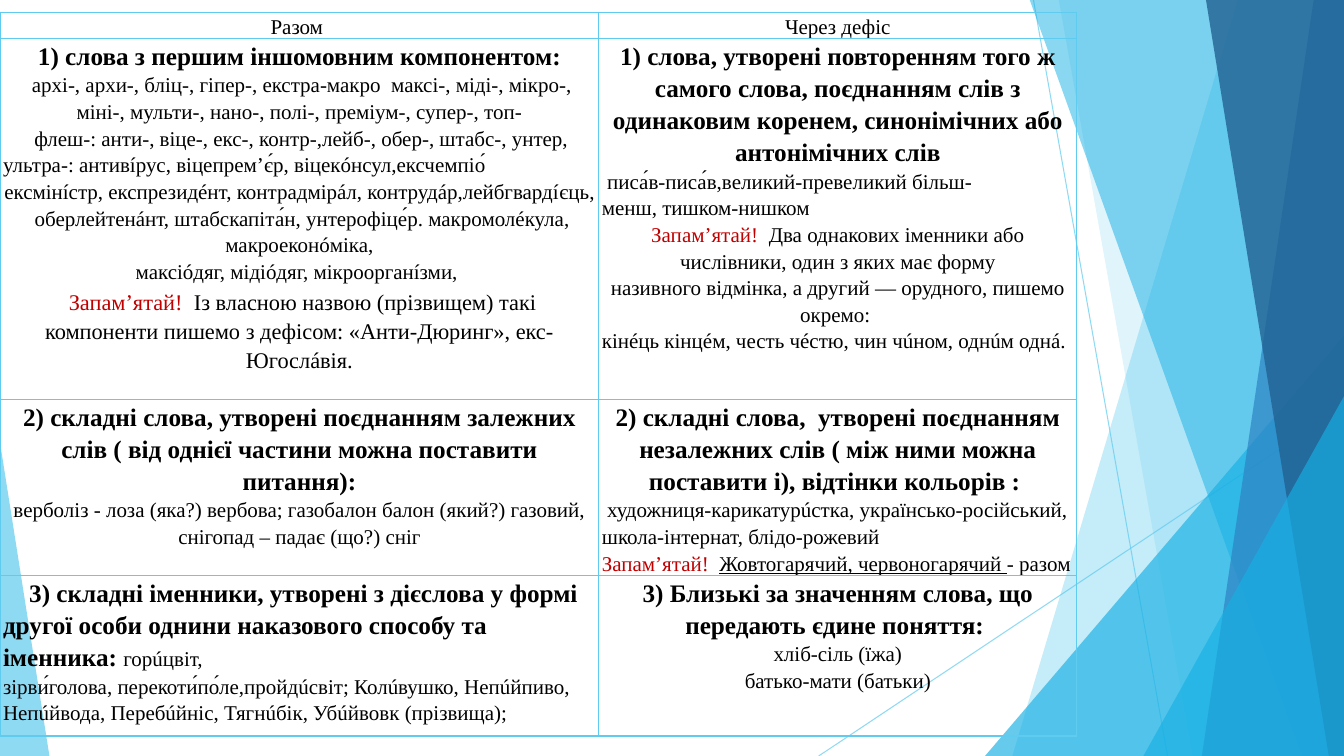
from dataclasses import dataclass

from lxml import etree
from pptx import Presentation
from pptx.dml.color import RGBColor
from pptx.enum import shapes, text
from pptx.oxml import ns
from pptx.util import Inches, Pt


@dataclass(frozen=True)
class Theme:
    font: str = "Times New Roman"
    ink: str = "000000"
    red: str = "C00000"
    sky: str = "5FCBEF"
    cyan: str = "17B0E4"
    blue: str = "2E83C3"
    navy: str = "226292"
    head: int = 18
    note: int = 16
    body: int = 15
    leading: float = 1.15


T = Theme()
W, H = 13.33, 7.5
C, L = text.PP_ALIGN.CENTER, text.PP_ALIGN.LEFT

# Run styles: size, bold, colour, underline
HEAD = (T.head, True, T.ink, False)
GAP = (T.head, False, T.ink, False)
BODY = (T.body, False, T.ink, False)
UNDER = (T.body, False, T.ink, True)
ALERT = (T.body, False, T.red, False)
NOTE = (T.note, False, T.ink, False)
NOTE_ALERT = (T.note, False, T.red, False)


def para(*runs, align=C, indent=0):
    return align, indent, runs


def head(words):
    return para((words, HEAD))


def body(words, align=C, indent=0):
    return para((words, BODY), align=align, indent=indent)


# Table content: one list of paragraphs per cell
ROWS = [
    [[body("Разом ")], [body("Через дефіс")]],
    [
        [
            head("1) слова з першим іншомовним компонентом:"),
            body(" архі-, архи-, бліц-, гіпер-, екстра-макро  максі-, міді-, мікро-, міні-, "
                 "мульти-, нано-, полі-, преміум-, супер-, топ-"),
            body("флеш-: анти-, віце-, екс-, контр-,лейб-, обер-, штабс-, унтер, ультра-: "
                 "антивíрус, віцепрем’є́р, віцекóнсул,ексчемпіо́", L, 0.31),
            body("ексмінíстр, експрезидéнт, контрадмірáл, контрудáр,лейбгвардíєць,  "
                 "оберлейтенáнт, штабскапіта́н, унтерофіце́р. макромолéкула, макроеконóміка,"),
            body("максіóдяг, мідіóдяг, мікроорганíзми, "),
            para((" ", GAP), ("Запам’ятай!  ", NOTE_ALERT),
                 ("Із власною назвою (прізвищем) такі компоненти пишемо з дефісом: "
                  "«Анти-Дюринг», екс-Югослáвія.", NOTE)),
        ],
        [
            head("1) слова, утворені повторенням того ж самого слова, поєднанням слів з "
                 "одинаковим коренем, синонімічних або антонімічних слів"),
            body(" писа́в-писа́в,великий-превеликий більш-", L),
            body("менш, тишком-нишком", L),
            para(("Запам’ятай!  ", ALERT),
                 ("Два однакових іменники або числівники, один з яких має форму", BODY)),
            body("називного відмінка, а другий — орудного, пишемо окремо: "),
            body("кінéць кінцéм, честь чéстю, чин чúном, однúм однá.", L),
        ],
    ],
    [
        [
            head("2) складні слова, утворені поєднанням залежних слів "
                 "( від однієї частини можна поставити питання):"),
            body("верболіз - лоза (яка?) вербова; газобалон балон (який?) газовий, "
                 "снігопад – падає (що?) сніг"),
        ],
        [
            head("2) складні слова,  утворені поєднанням незалежних слів "
                 "( між ними можна поставити і), відтінки кольорів : "),
            body(" художниця-карикатурúстка, українсько-російський, "
                 "школа-інтернат, блідо-рожевий", L),
            para(("Запам’ятай!  ", ALERT), ("Жовтогарячий, червоногарячий ", UNDER),
                 ("- разом", BODY), align=L),
        ],
    ],
    [
        [
            para(("3) складні іменники, утворені з дієслова у формі другої особи однини "
                  "наказового способу та іменника: ", HEAD), ("горúцвіт,", BODY),
                 align=L, indent=0.26),
            body("зірви́голова, перекоти́по́ле,пройдúсвіт; Колúвушко, Непúйпиво, "
                 "Непúйвода, Перебúйніс, Тягнúбік, Убúйвовк (прізвища);", L),
        ],
        [
            head("3) Близькі за значенням слова, що передають єдине поняття: "),
            body("хліб-сіль (їжа)"),
            body("батько-мати (батьки)"),
        ],
    ],
]


def set_alpha(fill_parent, percent):
    for clr in fill_parent.iter(ns.qn("a:srgbClr")):
        etree.SubElement(clr, ns.qn("a:alpha")).set("val", str(percent * 1000))


def paint(sp, color, percent):
    sp.shadow.inherit = False
    sp.fill.solid()
    sp.fill.fore_color.rgb = RGBColor.from_string(color)
    set_alpha(sp._element.spPr, percent)
    sp.line.fill.background()


def add_ray(s, x1, y1, x2, y2):
    ray = s.shapes.add_connector(shapes.MSO_CONNECTOR.STRAIGHT, *map(Inches, (x1, y1, x2, y2)))
    ray.line.color.rgb = RGBColor.from_string(T.sky)
    ray.line.width = Pt(0.75)
    set_alpha(ray._element.spPr, 70)
    etree.SubElement(ray._element.spPr, ns.qn("a:effectLst"))


def add_facet(s, top_x, bottom_x, color, percent):
    """Full-height band from a slanted left edge to the right side of the slide."""
    top = Inches(-0.01)
    fb = s.shapes.build_freeform(Inches(top_x), top)
    fb.add_line_segments([(Inches(W), top), (Inches(W), Inches(H)), (Inches(bottom_x), Inches(H))])
    paint(fb.convert_to_shape(), color, percent)


def add_corner(s, left, top, width, apex, color, percent):
    """Triangle standing on the bottom edge of the slide."""
    sp = s.shapes.add_shape(shapes.MSO_SHAPE.ISOSCELES_TRIANGLE,
                            *map(Inches, (left, top, width, H - top)))
    sp.adjustments[0] = apex
    paint(sp, color, percent)


def add_backdrop(s):
    add_ray(s, 10.25, 0, 11.58, H)
    add_ray(s, W, 4.03, 8.12, H)
    add_facet(s, 12.28, 10.04, T.sky, 36)
    add_facet(s, 10.5, 11.83, T.sky, 20)
    add_corner(s, 9.77, 3.33, 3.56, 1, T.cyan, 66)
    add_facet(s, 10.21, 12.91, T.cyan, 50)
    add_facet(s, 13.03, 11.92, T.blue, 70)
    add_facet(s, 11.96, 13.18, T.navy, 80)
    add_corner(s, 11.34, 3.93, 1.99, 1, T.cyan, 66)
    add_corner(s, 0, 4.39, 0.49, 0, T.sky, 70)


def fill_cell(cell, paragraphs):
    cell.margin_left = cell.margin_right = Inches(0.03)
    cell.margin_top = cell.margin_bottom = 0
    # Borders come before the fill in the cell properties
    tc_pr = cell._tc.get_or_add_tcPr()
    for side in "LRTB":
        ln = etree.SubElement(tc_pr, ns.qn(f"a:ln{side}"), w=str(Pt(1)))
        solid = etree.SubElement(ln, ns.qn("a:solidFill"))
        etree.SubElement(solid, ns.qn("a:srgbClr"), val=T.sky)
    cell.fill.background()

    tf = cell.text_frame
    for i, (align, indent, runs) in enumerate(paragraphs):
        p = tf.add_paragraph() if i else tf.paragraphs[0]
        p.alignment, p.line_spacing = align, T.leading
        if indent:
            p._p.get_or_add_pPr().set("indent", str(Inches(indent)))
        for words, (size, bold, color, underline) in runs:
            r = p.add_run()
            r.text = words
            r.font.name, r.font.size = T.font, Pt(size)
            r.font.bold, r.font.underline = bold, underline
            r.font.color.rgb = RGBColor.from_string(color)


def add_rules_table(s, left, top, widths, heights):
    table = s.shapes.add_table(len(heights), len(widths), Inches(left), Inches(top),
                               Inches(sum(widths)), Inches(sum(heights))).table
    table.first_row = table.horz_banding = False
    for column, width in zip(table.columns, widths):
        column.width = Inches(width)
    for row, height, contents in zip(table.rows, heights, ROWS):
        row.height = Inches(height)
        for cell, paragraphs in zip(row.cells, contents):
            fill_cell(cell, paragraphs)


def main():
    prs = Presentation()
    prs.slide_width, prs.slide_height = Inches(W), Inches(H)
    s = prs.slides.add_slide(prs.slide_layouts[6])
    add_backdrop(s)
    add_rules_table(s, 0, 0.12, (5.94, 4.74), (0.13, 3.58, 1.7, 1.59))
    prs.save("out.pptx")


if __name__ == "__main__":
    main()
